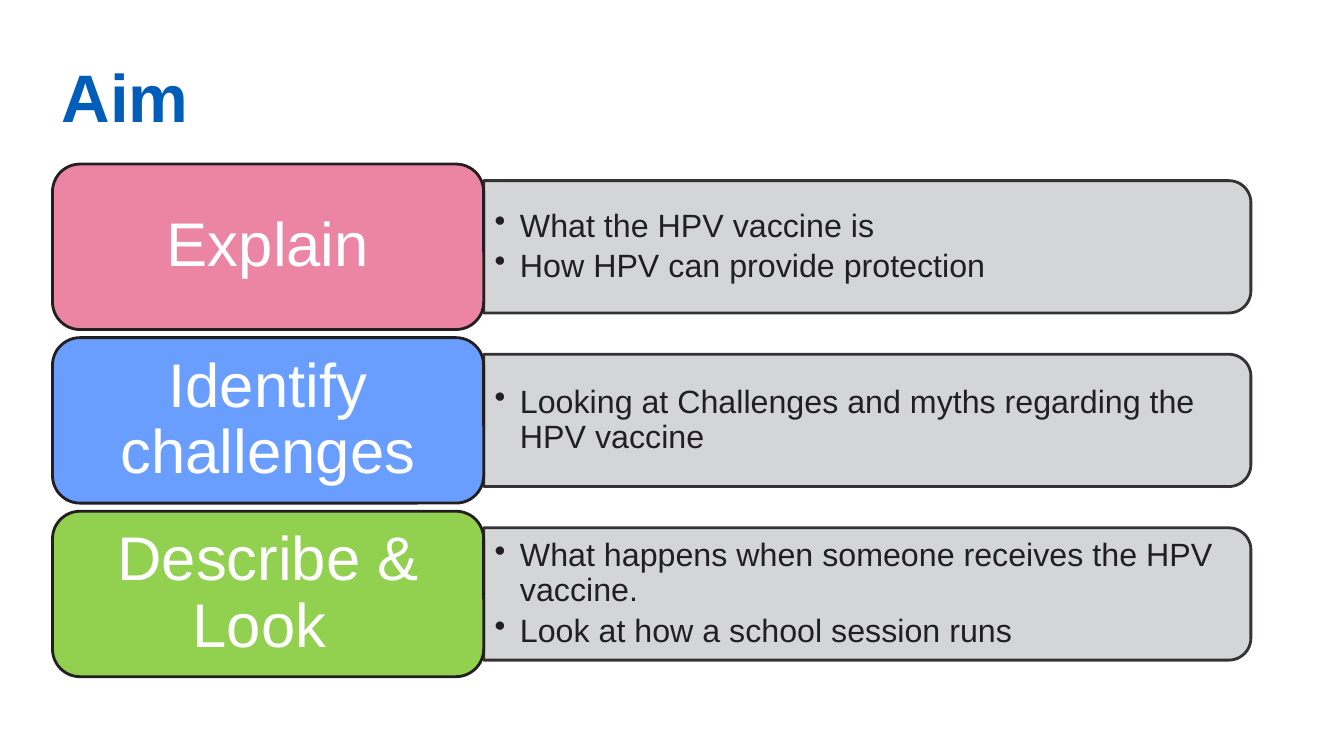
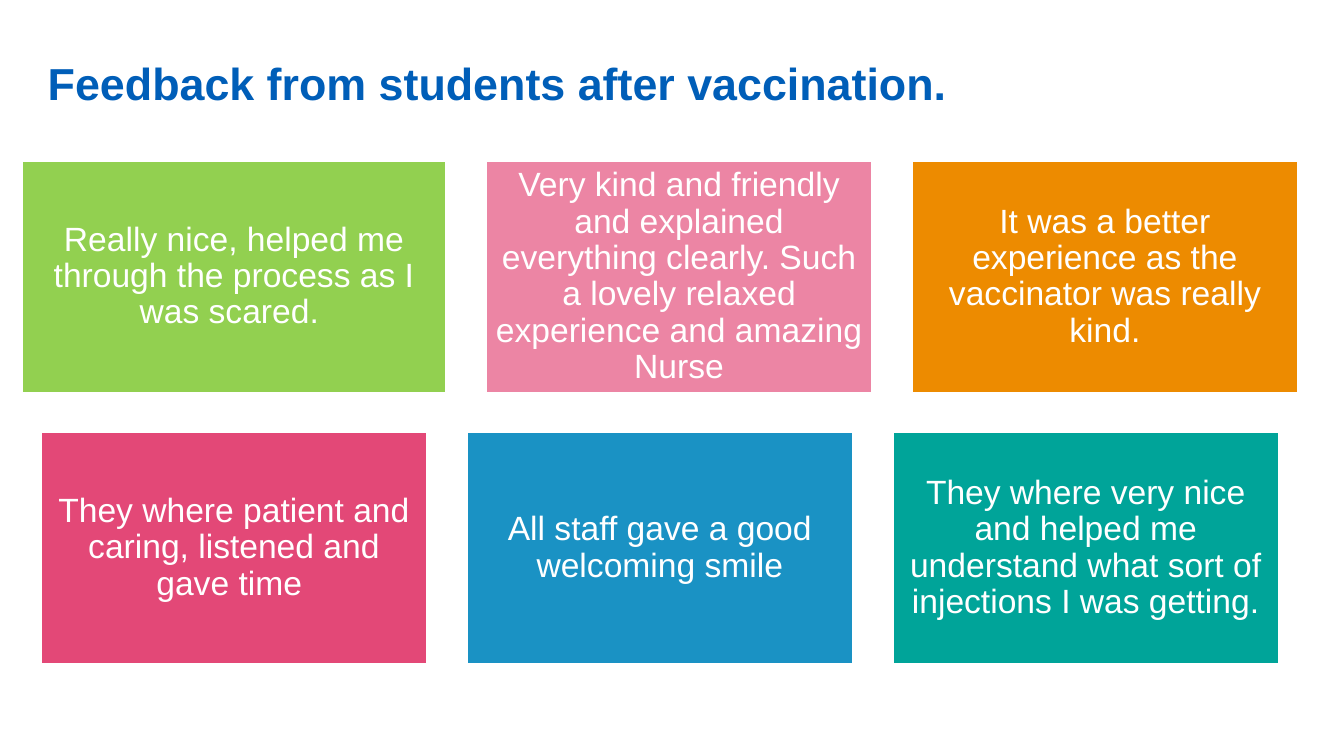
from lxml import etree
from pptx import Presentation
from pptx.dml.color import RGBColor
from pptx.enum.shapes import MSO_SHAPE
from pptx.enum.text import MSO_ANCHOR, PP_ALIGN
from pptx.oxml.ns import qn
from pptx.util import Pt

RECTANGLE = MSO_SHAPE.RECTANGLE
ROUNDED = MSO_SHAPE.ROUNDED_RECTANGLE
TWO_ROUNDED = MSO_SHAPE.ROUND_2_SAME_RECTANGLE
MIDDLE = MSO_ANCHOR.MIDDLE
LEFT, CENTER = PP_ALIGN.LEFT, PP_ALIGN.CENTER

WHITE = RGBColor(0xFF, 0xFF, 0xFF)
INK = RGBColor(0x23, 0x1F, 0x20)
TITLE_BLUE = RGBColor(0x00, 0x5E, 0xB8)
GREY = RGBColor(0xCF, 0xD1, 0xD3)
PINK = RGBColor(0xEC, 0x85, 0xA4)
LIGHT_BLUE = RGBColor(0x69, 0x9E, 0xFF)
GREEN = RGBColor(0x92, 0xD0, 0x50)
ORANGE = RGBColor(0xED, 0x8B, 0x00)
ROSE = RGBColor(0xE3, 0x48, 0x77)
BLUE = RGBColor(0x1A, 0x92, 0xC4)
TEAL = RGBColor(0x00, 0xA4, 0x99)

FONT = "Arial"
TITLE_TOP = 36


def add_block(page, kind, left, top, width, height, fill, outline):
    shape = page.shapes.add_shape(kind, Pt(left), Pt(top), Pt(width), Pt(height))
    shape.shadow.inherit = False
    shape.fill.solid()
    shape.fill.fore_color.rgb = fill
    shape.line.color.rgb = outline
    shape.line.width = Pt(2)
    return shape


def write(box, lines, size, color, align=CENTER, inset=(7.2, 7.2), spacing=0.9,
          bold=False, bulleted=False):
    """Fill a box with paragraphs; inset is (sides, top and bottom)."""
    frame = box.text_frame
    frame.word_wrap = True
    frame.margin_left = frame.margin_right = Pt(inset[0])
    frame.margin_top = frame.margin_bottom = Pt(inset[1])
    for index, line in enumerate(lines):
        para = frame.add_paragraph() if index else frame.paragraphs[0]
        para.alignment = align
        para.line_spacing = spacing
        if index:
            para.space_before = Pt(4)
        if bulleted:
            properties = para._p.get_or_add_pPr()
            properties.set("marL", str(Pt(18)))
            properties.set("indent", str(-Pt(18)))
            etree.SubElement(properties, qn("a:buChar")).set("char", "•")
        span = para.add_run()
        span.text = line
        span.font.name = FONT
        span.font.size = Pt(size)
        span.font.bold = bold
        span.font.color.rgb = color


deck = Presentation()
deck.slide_width, deck.slide_height = Pt(960), Pt(540)
pages = []
for title, left, size in [
    ("Aim", 37, 48),
    ("Feedback from students after vaccination.", 27, 32),
]:
    page = deck.slides.add_slide(deck.slide_layouts[6])
    box = page.shapes.add_textbox(Pt(left), Pt(TITLE_TOP), Pt(680), Pt(51))
    write(box, [title], size, TITLE_BLUE, LEFT, (7.2, 3.6), 1, bold=True)
    pages.append(page)
aim_page, feedback_page = pages

# Aim: coloured labels, each with a grey panel to its right
AIMS = [
    ("Explain", PINK,
     ["What the HPV vaccine is", "How HPV can provide protection"]),
    ("Identify challenges", LIGHT_BLUE,
     ["Looking at Challenges and myths regarding the HPV vaccine"]),
    ("Describe & Look ", GREEN,
     ["What happens when someone receives the HPV vaccine.",
      "Look at how a school session runs"]),
]
LABEL_LEFT, LABEL_TOP, LABEL_WIDTH, LABEL_HEIGHT = 37.5, 117.2, 308, 118.2
LABEL_PITCH = 124
PANEL_LEFT = LABEL_LEFT + LABEL_WIDTH
PANEL_WIDTH, PANEL_HEIGHT = 548, 94.5
POINTS_WIDTH, POINTS_HEIGHT = 543.5, 85

for row, (heading, color, points) in enumerate(AIMS):
    top = LABEL_TOP + row * LABEL_PITCH
    middle = top + LABEL_HEIGHT / 2
    # The panel is drawn upright and turned so its round corners face right
    panel = add_block(aim_page, TWO_ROUNDED,
                      PANEL_LEFT + (PANEL_WIDTH - PANEL_HEIGHT) / 2,
                      middle - PANEL_WIDTH / 2,
                      PANEL_HEIGHT, PANEL_WIDTH, GREY, INK)
    panel.rotation = 90
    for tint in panel._element.spPr.iter(qn("a:srgbClr")):
        etree.SubElement(tint, qn("a:alpha")).set("val", "90000")
    box = aim_page.shapes.add_textbox(Pt(PANEL_LEFT + 0.8), Pt(middle - POINTS_HEIGHT / 2),
                                      Pt(POINTS_WIDTH), Pt(POINTS_HEIGHT))
    box.text_frame.vertical_anchor = MIDDLE
    write(box, points, 23, INK, LEFT, (7.2, 3.6), bulleted=True)
    label = add_block(aim_page, ROUNDED, LABEL_LEFT, top, LABEL_WIDTH, LABEL_HEIGHT,
                      color, INK)
    write(label, [heading], 44, WHITE, inset=(19, 12))

# Feedback: two centred rows of cards
CARD_WIDTH, WIDE_CARD, CARD_HEIGHT = 276.5, 304, 166.3
CARD_GAP, ROW_PITCH = 30.3 - 2.6, 193.8
CARDS_TOP, CARDS_CENTER = 114.5, 471.3
FEEDBACK = [
    [("Really nice, helped me through the process as I was scared. ", GREEN, WIDE_CARD),
     ("Very kind and friendly and explained everything clearly. Such a lovely relaxed "
      "experience and amazing Nurse", PINK, CARD_WIDTH),
     ("It was a better experience as the vaccinator was really kind.", ORANGE, CARD_WIDTH)],
    [("They where patient and caring, listened and gave time ", ROSE, CARD_WIDTH),
     ("All staff gave a good welcoming smile", BLUE, CARD_WIDTH),
     ("They where very nice and helped me understand what sort of injections I was getting.",
      TEAL, CARD_WIDTH)],
]

for row, cards in enumerate(FEEDBACK):
    row_width = sum(width for _, _, width in cards) + CARD_GAP * (len(cards) - 1)
    left = CARDS_CENTER - row_width / 2
    for quote, color, width in cards:
        card = add_block(feedback_page, RECTANGLE, left, CARDS_TOP + row * ROW_PITCH,
                         width, CARD_HEIGHT, color, WHITE)
        write(card, [quote], 24, WHITE)
        left += width + CARD_GAP

deck.save("out.pptx")
